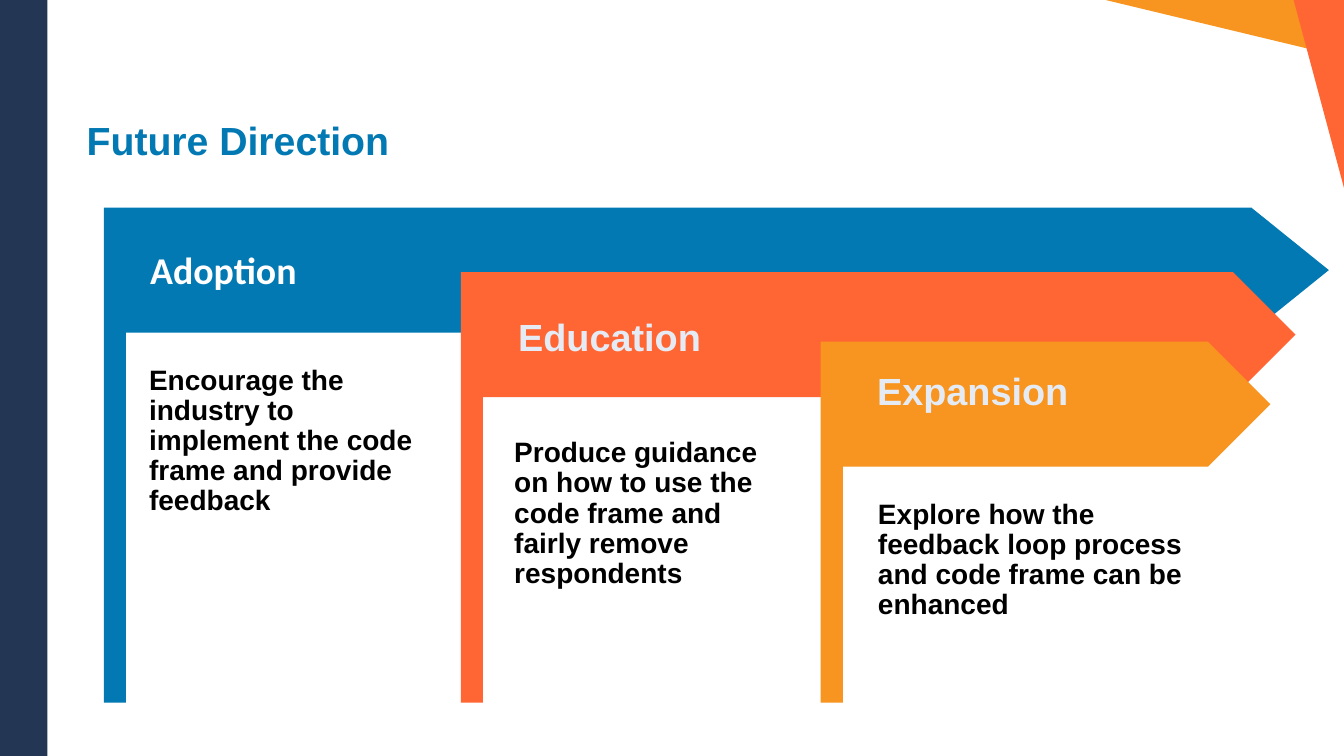
from pptx import Presentation
from pptx import util as u
from pptx.dml.color import RGBColor
from pptx.enum import shapes, text

NAVY = RGBColor(0x23, 0x36, 0x53)
BLUE = RGBColor(0x02, 0x79, 0xB3)
CORAL = RGBColor(0xFF, 0x66, 0x33)
ORANGE = RGBColor(0xF7, 0x95, 0x20)
WHITE = RGBColor(0xFF, 0xFF, 0xFF)
PALE = RGBColor(0xE5, 0xEB, 0xF4)
BLACK = RGBColor(0, 0, 0)

SHAPE = shapes.MSO_SHAPE
BAR_W, ARROW_H, BOTTOM = 0.22, 1.24, 6.97
DEFAULT_INSETS = (0.1, 0.05, 0.1, 0.05)
HEADING_INSETS = (0.35, 0, 0.28, 0)


class Deck:
    """Holds the text style and the current slide."""

    font = {"name": "Arial", "bold": True}

    def __init__(self, prs):
        self.s = prs.slides.add_slide(prs.slide_layouts[5])

    def fill_text(self, sp, words, insets, anchor, spacing, **font):
        tf = sp.text_frame
        left, top, right, bottom = map(u.Inches, insets)
        frame = {"margin_left": left, "margin_top": top, "margin_right": right,
                 "margin_bottom": bottom, "word_wrap": True,
                 "auto_size": text.MSO_AUTO_SIZE.NONE, "vertical_anchor": anchor}
        for key, value in frame.items():
            setattr(tf, key, value)
        p = tf.paragraphs[0]
        p.alignment = text.PP_ALIGN.LEFT
        p.line_spacing = spacing
        r = p.add_run()
        r.text = words
        color = font.pop("color")
        for key, value in {**self.font, **font}.items():
            setattr(r.font, key, value)
        r.font.color.rgb = color

    def title(self, words, box, **font):
        sp = self.s.shapes.title
        for key, value in zip(("left", "top", "width", "height"), box):
            setattr(sp, key, u.Inches(value))
        self.fill_text(sp, words, (0, 0, 0, 0), text.MSO_ANCHOR.BOTTOM, 1.0, **font)

    def label(self, words, box, insets=DEFAULT_INSETS, **font):
        sp = self.s.shapes.add_textbox(*map(u.Inches, box))
        self.fill_text(sp, words, insets, text.MSO_ANCHOR.TOP, 0.9, **font)

    def shape(self, kind, box, color, rotation=0, adjust=()):
        sp = self.s.shapes.add_shape(kind, *map(u.Inches, box))
        sp.shadow.inherit = False
        sp.fill.solid()
        sp.fill.fore_color.rgb = color
        sp.line.fill.background()
        sp.rotation = rotation
        for i, value in enumerate(adjust):
            sp.adjustments[i] = value

    def stage(self, left, top, arrow_w, head, color):
        arrow_left = left + BAR_W
        self.shape(SHAPE.RIGHT_ARROW, (arrow_left, top, arrow_w, ARROW_H),
                   color, adjust=(1, head))
        self.shape(SHAPE.RECTANGLE, (left, top, BAR_W, BOTTOM - top), color)


def main():
    prs = Presentation()
    prs.slide_width, prs.slide_height = u.Inches(13.33), u.Inches(7.5)
    deck = Deck(prs)

    # Corner and side decoration
    deck.shape(SHAPE.RIGHT_TRIANGLE, (10.31, -0.54, 2.52, 1.37), ORANGE, 165)
    deck.shape(SHAPE.ISOSCELES_TRIANGLE, (11.89, 0.08, 3.54, 1.24), CORAL, 75)
    deck.shape(SHAPE.RECTANGLE, (0, 0, 0.47, 7.5), NAVY)

    deck.title("Future Direction", (0.86, 0.86, 6.71, 0.76),
               size=u.Pt(28), color=BLUE)

    # Stages: arrow (left, top, width, head, colour), heading, body
    stages = [
        ((1.03, 2.06, 11.93, 0.62, BLUE),
         ("Adoption", (1.14, 2.5, 11.5, 0.62), {"name": "Calibri", "color": WHITE}),
         ("Encourage the industry to implement the code frame and provide feedback",
          (1.38, 3.58, 2.91, 1.62), DEFAULT_INSETS)),
        ((4.57, 2.7, 8.06, 0.5, CORAL),
         ("Education", (4.79, 3.16, 2.93, 0.62), {"color": PALE}),
         ("Produce guidance on how to use the code frame and fairly remove respondents",
          (4.99, 4.24, 2.91, 2.98), (0.11,) * 4)),
        ((8.14, 3.39, 4.24, 0.5, ORANGE),
         ("Expansion", (8.35, 3.7, 2.9, 0.62), {"color": PALE}),
         ("Explore how the feedback loop process and code frame can be enhanced",
          (8.61, 4.91, 3.3, 1.31), DEFAULT_INSETS)),
    ]
    for arrow, (heading, heading_box, font), (body, body_box, insets) in stages:
        deck.stage(*arrow)
        deck.label(heading, heading_box, HEADING_INSETS, size=u.Pt(27), **font)
        deck.label(body, body_box, insets, size=u.Pt(20), color=BLACK)

    prs.save("out.pptx")


if __name__ == "__main__":
    main()
